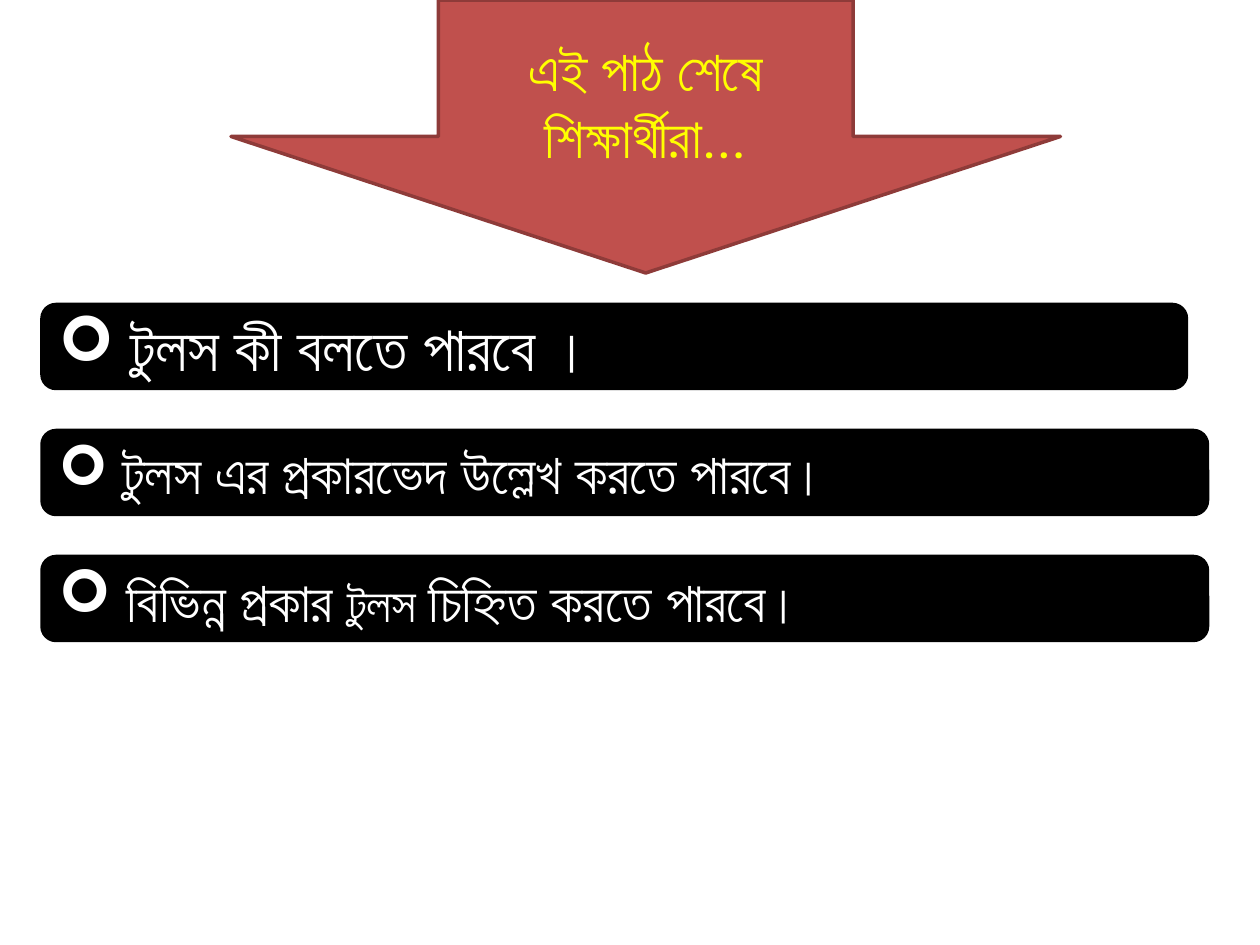
from dataclasses import dataclass

from lxml.etree import SubElement
from pptx import Presentation
from pptx.dml.color import RGBColor
from pptx.enum.shapes import MSO_SHAPE
from pptx.enum.text import MSO_ANCHOR, PP_ALIGN
from pptx.oxml.ns import qn
from pptx.util import Inches, Pt


@dataclass(frozen=True)
class Theme:
    font: str = "Roboto"
    arrow_fill: str = "C0504D"
    arrow_line: str = "8E3B39"
    heading: str = "FFFF00"
    bar: str = "000000"
    bar_text: str = "FFFFFF"
    line_width: int = 2
    small: int = 28
    medium: int = 32
    bullet_medium: int = 34
    large: int = 36


def write_text(paragraph, text, *, size, color, font):
    run = paragraph.add_run()
    run.text = text
    run.font.name = font
    run.font.size = Pt(size)
    run.font.color.rgb = RGBColor.from_string(color)


class LessonSlide:
    columns = 120
    rows = 90

    def __init__(self, presentation, theme):
        self.theme = theme
        self.column = presentation.slide_width / self.columns
        self.row = presentation.slide_height / self.rows
        self.slide = presentation.slides.add_slide(presentation.slide_layouts[6])

    def panel(self, kind, left, top, width, height, *, fill, line):
        shape = self.slide.shapes.add_shape(
            kind,
            round(left * self.column),
            round(top * self.row),
            round(width * self.column),
            round(height * self.row),
        )
        shape.shadow.inherit = False
        shape.fill.solid()
        shape.fill.fore_color.rgb = RGBColor.from_string(fill)
        shape.line.color.rgb = RGBColor.from_string(line)
        shape.line.width = Pt(self.theme.line_width)
        shape.text_frame.word_wrap = True
        shape.text_frame.vertical_anchor = MSO_ANCHOR.MIDDLE
        return shape.text_frame.paragraphs[0]

    def heading_arrow(self, text, left, top, width, height):
        theme = self.theme
        paragraph = self.panel(
            MSO_SHAPE.DOWN_ARROW, left, top, width, height,
            fill=theme.arrow_fill, line=theme.arrow_line,
        )
        paragraph.alignment = PP_ALIGN.CENTER
        write_text(paragraph, text, size=theme.medium, color=theme.heading, font=theme.font)

    def bullet_bar(self, runs, left, top, width, height):
        theme = self.theme
        paragraph = self.panel(
            MSO_SHAPE.ROUNDED_RECTANGLE, left, top, width, height,
            fill=theme.bar, line=theme.bar,
        )
        paragraph.alignment = PP_ALIGN.LEFT
        properties = paragraph._p.get_or_add_pPr()
        SubElement(properties, qn("a:buFont"), typeface="Wingdings")
        SubElement(properties, qn("a:buChar"), char="➢")
        for text, size in runs:
            write_text(paragraph, text, size=size, color=theme.bar_text, font=theme.font)


def main():
    presentation = Presentation()
    presentation.slide_width = Inches(10)
    presentation.slide_height = Inches(7.5)
    theme = Theme()
    lesson = LessonSlide(presentation, theme)
    lesson.heading_arrow("এই পাঠ শেষে শিক্ষার্থীরা...", 22, 0, 79, 26)

    outcomes = [
        (109, [(" টুলস কী বলতে পারবে ।", theme.large)]),
        (111, [(" টুলস এর প্রকারভেদ উল্লেখ করতে পারবে।", theme.medium)]),
        (111, [
            (" ", theme.bullet_medium),
            ("বিভিন্ন প্রকার ", theme.medium),
            ("টুলস ", theme.small),
            ("চিহ্নিত করতে পারবে।", theme.medium),
        ]),
    ]
    for index, (width, runs) in enumerate(outcomes):
        lesson.bullet_bar(runs, 4, 29 + 12 * index, width, 8)

    presentation.save("out.pptx")


if __name__ == "__main__":
    main()
